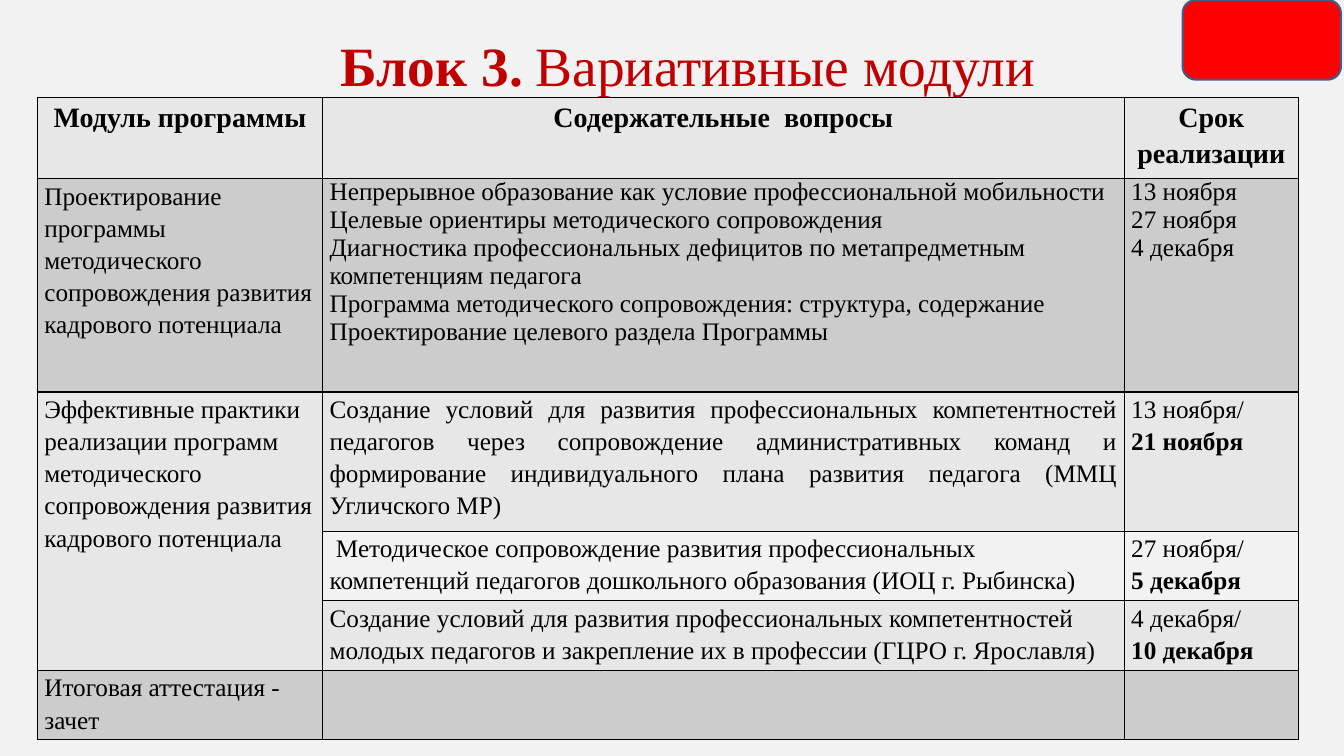
from dataclasses import dataclass

from lxml import etree
from pptx import Presentation
from pptx.dml.color import RGBColor
from pptx.enum.shapes import MSO_SHAPE
from pptx.enum.text import MSO_ANCHOR, PP_ALIGN
from pptx.oxml.ns import qn
from pptx.util import Inches, Pt

LEFT, CENTER, JUSTIFY = PP_ALIGN.LEFT, PP_ALIGN.CENTER, PP_ALIGN.JUSTIFY
MIDDLE = MSO_ANCHOR.MIDDLE
ROUNDED = MSO_SHAPE.ROUNDED_RECTANGLE

FONT = "Times New Roman"
BLACK = RGBColor(0x00, 0x00, 0x00)
CRIMSON = RGBColor(0xC0, 0x00, 0x00)
RED = RGBColor(0xFF, 0x00, 0x00)
BLUE = RGBColor(0x3A, 0x5F, 0x8C)
PAPER = RGBColor(0xF2, 0xF2, 0xF2)
LIGHT = RGBColor(0xE7, 0xE7, 0xE7)
DARK = RGBColor(0xCC, 0xCC, 0xCC)

COLUMN_WIDTHS = (2.83, 7.95, 1.73)


@dataclass(frozen=True)
class Entry:
    """Text of one cell, one string per paragraph."""
    lines: tuple[str, ...] = ()
    size: float = 18
    align: PP_ALIGN = LEFT
    spacing: float = 1.15
    after: float = 0
    bold_from: int = 99


@dataclass(frozen=True)
class Row:
    height: float
    fill: RGBColor
    entries: tuple[Entry, Entry, Entry]


def heading(text: str) -> Entry:
    return Entry((text,), size=20, align=CENTER, after=10, bold_from=0)


def module(text: str) -> Entry:
    return Entry((text,), after=10)


def dates(planned: str, actual: str, align: PP_ALIGN = LEFT) -> Entry:
    return Entry((planned, actual), align=align, bold_from=1)


ROWS = (
    Row(0.8, LIGHT, (
        heading("Модуль программы"),
        heading("Содержательные  вопросы"),
        heading("Срок реализации"),
    )),
    Row(2.12, DARK, (
        module("Проектирование программы методического сопровождения "
               "развития кадрового потенциала"),
        Entry((
            "Непрерывное образование как условие профессиональной мобильности",
            "Целевые ориентиры методического сопровождения",
            "Диагностика профессиональных дефицитов по метапредметным "
            "компетенциям педагога",
            "Программа методического сопровождения: структура, содержание",
            "Проектирование целевого раздела Программы",
        ), spacing=1),
        Entry(("13 ноября", "27 ноября", "4 декабря"), spacing=1),
    )),
    Row(1.27, LIGHT, (
        module("Эффективные практики реализации программ методического "
               "сопровождения развития кадрового потенциала"),
        Entry((
            "Создание условий для развития профессиональных компетентностей "
            "педагогов через сопровождение административных команд и "
            "формирование индивидуального плана развития педагога "
            "(ММЦ Угличского МР)",
        ), align=JUSTIFY),
        dates("13 ноября/", "21 ноября", JUSTIFY),
    )),
    Row(0.64, PAPER, (
        Entry(),
        Entry((
            " Методическое сопровождение развития профессиональных "
            "компетенций педагогов дошкольного образования "
            "(ИОЦ г. Рыбинска)",
        )),
        dates("27 ноября/", "5 декабря"),
    )),
    Row(0.64, LIGHT, (
        Entry(),
        Entry((
            "Создание условий для развития профессиональных компетентностей "
            "молодых педагогов и закрепление их в профессии "
            "(ГЦРО г. Ярославля)",
        )),
        dates("4 декабря/", "10 декабря"),
    )),
    Row(0.63, DARK, (module("Итоговая аттестация - зачет"), Entry(), Entry())),
)
PRACTICES_FIRST, PRACTICES_LAST = 2, 4


def add_run(paragraph, text: str, size: float, color: RGBColor, bold: bool) -> None:
    run = paragraph.add_run()
    run.text = text
    run.font.name = FONT
    run.font.size = Pt(size)
    run.font.bold = bold
    run.font.color.rgb = color


def add_borders(cell) -> None:
    properties = cell._tc.get_or_add_tcPr()
    for position, side in enumerate(("lnL", "lnR", "lnT", "lnB")):
        line = etree.Element(qn(f"a:{side}"), w=str(Pt(1)))
        solid = etree.SubElement(line, qn("a:solidFill"))
        etree.SubElement(solid, qn("a:srgbClr"), val=str(BLACK))
        properties.insert(position, line)


def fill_cell(cell, entry: Entry, fill: RGBColor) -> None:
    cell.margin_left = cell.margin_right = Inches(0.07)
    cell.margin_top = cell.margin_bottom = 0
    cell.fill.solid()
    cell.fill.fore_color.rgb = fill
    add_borders(cell)
    frame = cell.text_frame
    for index, line in enumerate(entry.lines):
        paragraph = frame.add_paragraph() if index else frame.paragraphs[0]
        paragraph.alignment = entry.align
        paragraph.line_spacing = float(entry.spacing)
        paragraph.space_after = Pt(entry.after)
        add_run(paragraph, line, entry.size, BLACK, index >= entry.bold_from)


def add_title(slide) -> None:
    title = slide.shapes.add_textbox(
        Inches(1.98), Inches(0.36), Inches(9.69), Inches(0.55))
    frame = title.text_frame
    frame.word_wrap = True
    frame.vertical_anchor = MIDDLE
    frame.margin_top = frame.margin_bottom = 0
    paragraph = frame.paragraphs[0]
    paragraph.alignment = CENTER
    add_run(paragraph, "Блок 3.", 39.6, CRIMSON, True)
    add_run(paragraph, " ", 36, CRIMSON, False)
    add_run(paragraph, "Вариативные модули", 39.6, CRIMSON, False)


def add_schedule(slide) -> None:
    schedule = slide.shapes.add_table(
        len(ROWS), len(COLUMN_WIDTHS), Inches(0.37), Inches(0.97),
        Inches(sum(COLUMN_WIDTHS)), Inches(sum(row.height for row in ROWS))).table
    schedule.first_row = schedule.horz_banding = False
    for column, width in zip(schedule.columns, COLUMN_WIDTHS):
        column.width = Inches(width)
    for row_index, row in enumerate(ROWS):
        schedule.rows[row_index].height = Inches(row.height)
        for column_index, entry in enumerate(row.entries):
            fill_cell(schedule.cell(row_index, column_index), entry, row.fill)
    schedule.cell(PRACTICES_FIRST, 0).merge(schedule.cell(PRACTICES_LAST, 0))


def add_corner_badge(slide) -> None:
    badge = slide.shapes.add_shape(
        ROUNDED, Inches(11.73), 0, Inches(1.57), Inches(0.79))
    badge.shadow.inherit = False
    badge.fill.solid()
    badge.fill.fore_color.rgb = RED
    badge.line.color.rgb = BLUE
    badge.line.width = Pt(1.5)


def main() -> None:
    presentation = Presentation()
    presentation.slide_width = Inches(13.33)
    presentation.slide_height = Inches(7.5)
    slide = presentation.slides.add_slide(presentation.slide_layouts[6])
    slide.background.fill.solid()
    slide.background.fill.fore_color.rgb = PAPER
    add_title(slide)
    add_schedule(slide)
    add_corner_badge(slide)
    presentation.save("out.pptx")


if __name__ == "__main__":
    main()
